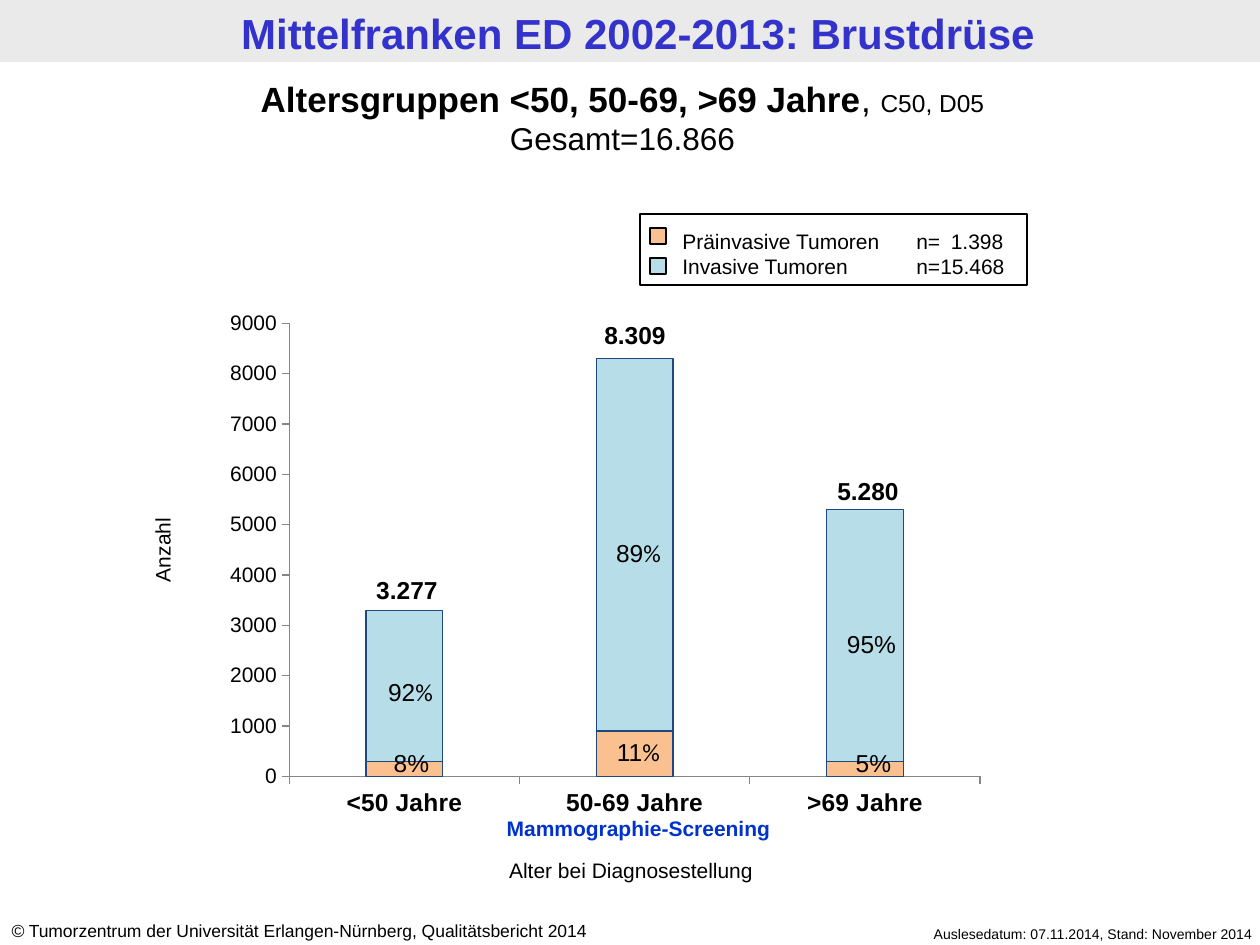
from lxml.etree import SubElement
from pptx import Presentation
from pptx.chart.data import CategoryChartData
from pptx.dml.color import RGBColor
from pptx.enum.chart import XL_CHART_TYPE, XL_TICK_MARK
from pptx.enum.shapes import MSO_SHAPE
from pptx.enum.text import PP_ALIGN
from pptx.oxml import parse_xml
from pptx.oxml.ns import nsdecls, qn
from pptx.util import Pt

EMU_PER_PX = 914400 / 126
PEACH, AQUA, BLACK = "FAC090", "B7DEE8", "000000"


def px(length):
    """Turn whole px into EMU."""
    return round(length * EMU_PER_PX)


def color(hex_string):
    """Turn a hex string into a colour."""
    return RGBColor.from_string(hex_string)


class Page:
    """Holds the text style and the slide being built."""

    font_name = "Arial"

    def __init__(self, slide):
        """Keep the slide to draw on."""
        self.slide = slide

    def style(self, font, size, bold=False, tint=BLACK, name=None, italic=False):
        """Apply the house style to a font."""
        font.size, font.bold, font.italic = Pt(size), bold, italic
        font.name = name or self.font_name
        font.color.rgb = color(tint)

    def text(self, frame, lines, align=PP_ALIGN.CENTER, rotation=0, tabs=()):
        """Add a text box whose lines are lists of (text, size, options) spans."""
        box = self.slide.shapes.add_textbox(*map(px, frame))
        box.rotation = rotation
        box.text_frame.word_wrap = True
        box.text_frame.text = "\n".join(spans[0][0] for spans in lines)
        for paragraph, spans in zip(box.text_frame.paragraphs, lines):
            paragraph.alignment = align
            if tabs:
                tab_list = SubElement(paragraph._p.get_or_add_pPr(), qn("a:tabLst"))
                for position, kind in tabs:
                    SubElement(tab_list, qn("a:tab"), pos=str(px(position)), algn=kind)
            for content, *_ in spans[1:]:
                paragraph.add_run().text = content
            for run, (_, size, options) in zip(paragraph.runs, spans):
                self.style(run.font, size, **options)

    def rectangle(self, frame, fill=None, line=None):
        """Add a rectangle with an optional fill and outline."""
        shape = self.slide.shapes.add_shape(MSO_SHAPE.RECTANGLE, *map(px, frame))
        shape.shadow.inherit = False
        for part, tint in ((shape.fill, fill), (shape.line.fill, line)):
            if tint:
                part.solid()
                part.fore_color.rgb = color(tint)
            else:
                part.background()
        if line:
            shape.line.width = Pt(0.75)

    def stacked_chart(self, frame, categories, series, layout):
        """Add a stacked column chart; series are (name, values, fill)."""
        data = CategoryChartData()
        data.categories = categories
        for name, values, _ in series:
            data.add_series(name, values)
        chart = self.slide.shapes.add_chart(
            XL_CHART_TYPE.COLUMN_STACKED, *map(px, frame), data).chart
        chart.has_title = chart.has_legend = False
        self.style(chart.font, 18, name="Calibri")
        plot = chart.plots[0]
        plot.gap_width, plot.overlap, plot.vary_by_categories = 200, 100, False
        for bars, (_, _, fill) in zip(plot.series, series):
            bars.format.fill.solid()
            bars.format.fill.fore_color.rgb = color(fill)
            bars.format.line.color.rgb = color("1F497D")
            bars.format.line.width = Pt(0.75)
        for axis, size, bold in ((chart.category_axis, 14, True), (chart.value_axis, 12, False)):
            axis.has_major_gridlines = False
            axis.major_tick_mark = XL_TICK_MARK.OUTSIDE
            axis.minor_tick_mark = XL_TICK_MARK.NONE
            axis.format.line.color.rgb = color("868686")
            axis.format.line.width = Pt(0.75)
            self.style(axis.tick_labels.font, size, bold)
        chart.value_axis.minimum_scale, chart.value_axis.maximum_scale = 0, 9000
        chart.value_axis.major_unit = 1000
        self.place_plot(chart, layout)

    def place_plot(self, chart, layout):
        """Fix the inner plot area at fractions of the chart."""
        settings = [("layoutTarget", "inner"), ("xMode", "edge"), ("yMode", "edge")]
        settings += zip("xywh", layout)
        body = "".join(f'<c:{tag} val="{value}"/>' for tag, value in settings)
        plot_area = chart._chartSpace.chart.plotArea
        for old in plot_area.findall(qn("c:layout")):
            plot_area.remove(old)
        plot_area.insert(0, parse_xml(
            f'<c:layout {nsdecls("c")}><c:manualLayout>{body}</c:manualLayout></c:layout>'))


def main():
    """Build the age group slide and save it."""
    deck = Presentation()
    deck.slide_width, deck.slide_height = px(1260), px(945)
    page = Page(deck.slides.add_slide(deck.slide_layouts[6]))
    bold = {"bold": True}

    page.rectangle((0, 0, 1260, 62), fill="EAEAEA")
    page.text((8, 1, 1260, 62), [[("Mittelfranken ED 2002-2013: Brustdrüse", 24,
                                   {"bold": True, "tint": "3333CC"})]])
    page.text((838, 919, 427, 30), [[("Auslesedatum: 07.11.2014, Stand: November 2014", 8, {})]],
              PP_ALIGN.RIGHT)
    page.text((-1, 914, 660, 34), [[
        ("©", 10, {"italic": True}),
        (" Tumorzentrum der Universität Erlangen-Nürnberg, Qualitätsbericht 2014", 10, {})]],
        PP_ALIGN.LEFT)

    page.stacked_chart(
        (190, 240, 879, 587), ("<50 Jahre", "50-69 Jahre", ">69 Jahre"),
        (("Präinvasive Tumoren", (300, 900, 300), PEACH),
         ("Invasive Tumoren", (3000, 7400, 5000), AQUA)),
        (0.113, 0.142, 0.786, 0.772))

    page.text((0, 71, 1245, 93), [
        [("Altersgruppen <50, 50-69, >69 Jahre", 20, bold), (", ", 20, {}), ("C50, D05", 14, {})],
        [("Gesamt=16.866", 18, {})]])
    page.text((421, 851, 420, 38), [[("Alter bei Diagnosestellung", 12, {})]])
    page.text((-2, 531, 329, 38), [[("Anzahl", 12, {})]], rotation=270)

    totals = (("3.277", 343, 569), ("8.309", 571, 314), ("5.280", 804, 470))
    for total, left, top in totals:
        page.text((left, top, 128, 43), [[(total, 14, bold)]])
    shares = (("92", 360, 671, "Calibri"), ("89", 588, 532, "Calibri"),
              ("11", 588, 731, "Calibri"), ("95", 821, 623, "Arial"),
              ("8", 361, 742, "Arial"), ("5", 823, 742, "Arial"))
    for share, left, top, name in shares:
        page.text((left, top, 101, 43), [[(share, 14, {}), ("%", 14, {"name": name})]])

    page.text((670, 222, 353, 63), [
        [("Präinvasive Tumoren\tn=\t1.398", 12, {})],
        [("Invasive Tumoren\tn=\t15.468", 12, {})]],
        PP_ALIGN.LEFT, tabs=((234, "l"), (321, "r")))
    page.rectangle((640, 214, 387, 71), line=BLACK)
    for top, fill in ((228, PEACH), (258, AQUA)):
        page.rectangle((650, top, 16, 16), fill, BLACK)
    page.text((471, 809, 335, 38), [[("Mammographie-Screening", 12,
                                      {"bold": True, "tint": "0033CC"})]])
    deck.save("out.pptx")


if __name__ == "__main__":
    main()
